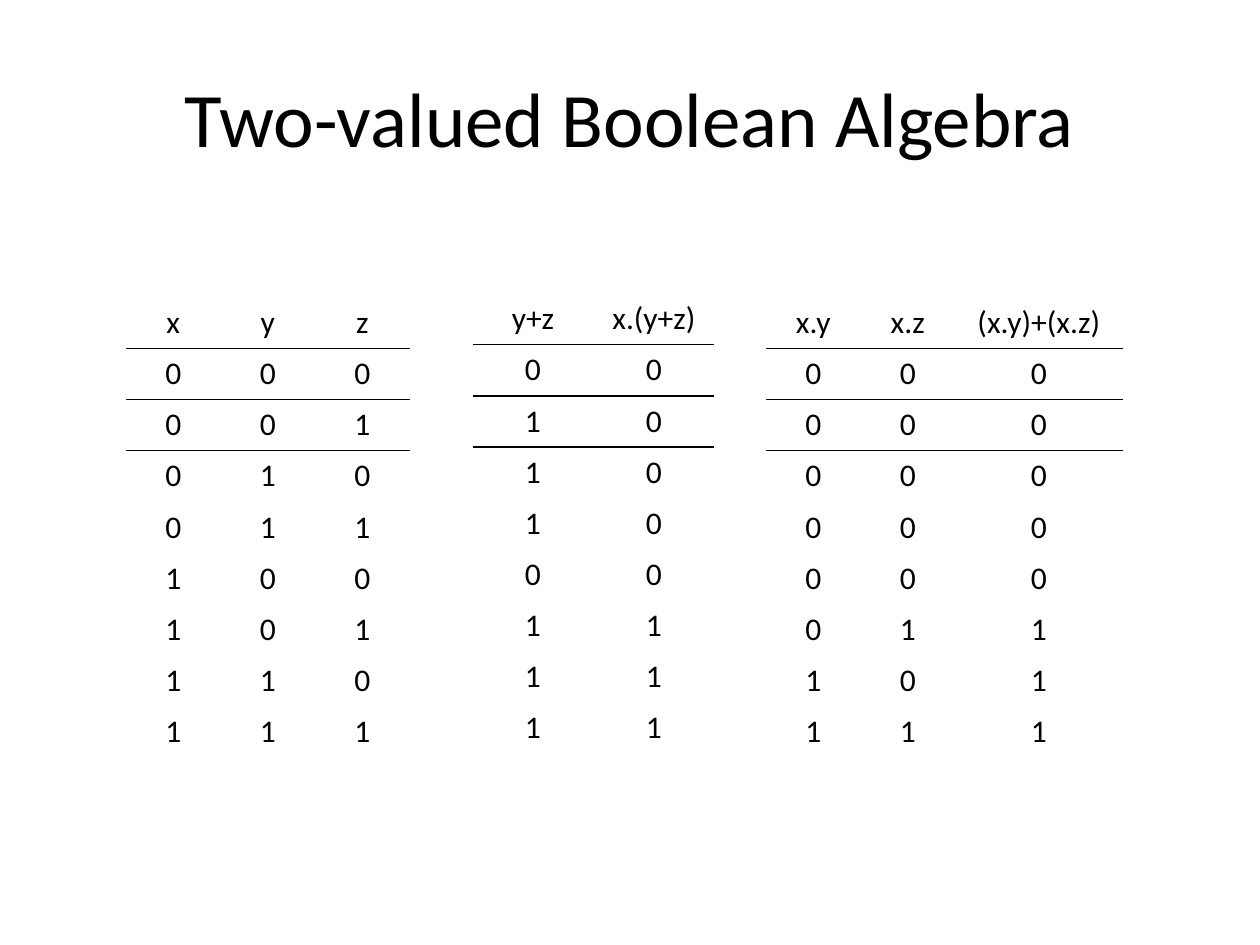
from dataclasses import dataclass
from itertools import product

from lxml.etree import SubElement
from pptx import Presentation
from pptx.dml.color import RGBColor as Color
from pptx.enum.text import MSO_ANCHOR as Anchor, PP_ALIGN as Align
from pptx.oxml.ns import qn
from pptx.util import Inches, Pt


@dataclass(frozen=True)
class Theme:
    font: str = "Calibri"
    ink: str = "000000"
    title_size: int = 44
    cell_size: int = 18
    rule_width: float = 1


THEME = Theme()
WIDTH, HEIGHT = 10, 7.5
TABLE_HEIGHT = 3.65
NARROW, MEDIUM, WIDE = 0.75, 0.96, 1.33
PLAIN_STYLE = "{2D5ABB26-0587-4C30-8999-92F81FD0307C}"  # no fill, no grid

# Each table: left, top, and columns of (heading, width, formula)
TABLES = [
    (1, 2.36, [
        ("x", NARROW, lambda x, y, z: x),
        ("y", NARROW, lambda x, y, z: y),
        ("z", NARROW, lambda x, y, z: z),
    ]),
    (3.75, 2.33, [
        ("y+z", MEDIUM, lambda x, y, z: y | z),
        ("x.(y+z)", MEDIUM, lambda x, y, z: x & (y | z)),
    ]),
    (6.08, 2.36, [
        ("x.y", NARROW, lambda x, y, z: x & y),
        ("x.z", NARROW, lambda x, y, z: x & z),
        ("(x.y)+(x.z)", WIDE, lambda x, y, z: (x & y) | (x & z)),
    ]),
]


def write(frame, text, size):
    """Put one centred line of text into a text frame."""
    para = frame.paragraphs[0]
    para.alignment = Align.CENTER
    span = para.add_run()
    span.text = text
    span.font.name = THEME.font
    span.font.size = Pt(size)
    span.font.color.rgb = Color.from_string(THEME.ink)


def add_title(page, text):
    box = page.shapes.add_textbox(
        Inches(WIDTH * 0.05), Inches(HEIGHT * 0.04),
        Inches(WIDTH * 0.9), Inches(1.25))
    box.text_frame.word_wrap = True
    box.text_frame.vertical_anchor = Anchor.MIDDLE
    write(box.text_frame, text, THEME.title_size)


def add_border(cell, side):
    """Rule one side of a cell: "T" for top, "B" for bottom."""
    properties = cell._tc.get_or_add_tcPr()
    line = SubElement(properties, qn(f"a:ln{side}"), w=str(Pt(THEME.rule_width)))
    fill = SubElement(line, qn("a:solidFill"))
    SubElement(fill, qn("a:srgbClr"), val=THEME.ink)


def add_truth_table(page, left, top, columns):
    headings, widths, formulas = zip(*columns)
    rows = [headings] + [
        [str(formula(*bits)) for formula in formulas]
        for bits in product((0, 1), repeat=3)]
    table = page.shapes.add_table(
        len(rows), len(columns), Inches(left), Inches(top),
        Inches(sum(widths)), Inches(TABLE_HEIGHT)).table
    table.first_row = table.horz_banding = False
    table._tbl.tblPr.find(qn("a:tableStyleId")).text = PLAIN_STYLE

    for column, width in zip(table.columns, widths):
        column.width = Inches(width)
    for r, values in enumerate(rows):
        for c, value in enumerate(values):
            cell = table.cell(r, c)
            write(cell.text_frame, value, THEME.cell_size)
            # Rules lie under the heading and under the first row of values
            if r in (1, 2):
                add_border(cell, "T")
            if r in (0, 1):
                add_border(cell, "B")
            cell.fill.background()


def main():
    deck = Presentation()
    deck.slide_width, deck.slide_height = Inches(WIDTH), Inches(HEIGHT)
    page = deck.slides.add_slide(deck.slide_layouts[6])
    add_title(page, "Two-valued Boolean Algebra")
    for left, top, columns in TABLES:
        add_truth_table(page, left, top, columns)
    deck.save("out.pptx")


if __name__ == "__main__":
    main()
